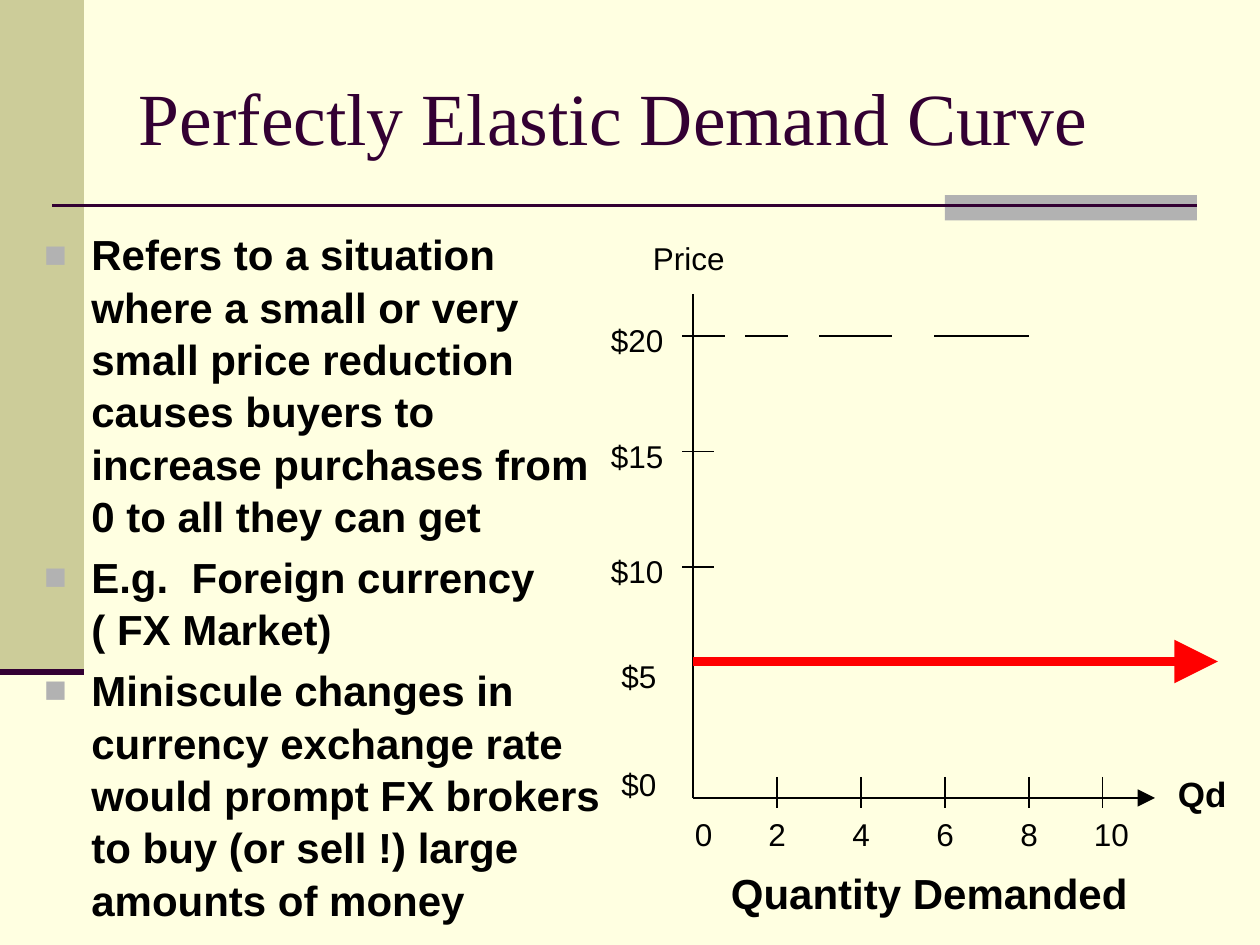
from dataclasses import dataclass

from lxml import etree
from pptx import Presentation
from pptx import util as u
from pptx.dml.color import RGBColor
from pptx.enum import shapes, text
from pptx.oxml import ns

Pt = u.Pt


@dataclass(frozen=True)
class Theme:
    background: str = "FFFFE1"
    panel: str = "CCCC99"
    accent: str = "B2B2B2"
    plum: str = "330033"
    ink: str = "000000"
    curve: str = "FF0000"
    title_font: str = "Times New Roman"
    body_font: str = "Arial"
    title_size: float = 42
    body_size: float = 24
    unit_size: float = 20
    label_size: float = 18


THEME = Theme()


def color(value):
    return RGBColor.from_string(value)


def add_child(parent, tag, **attributes):
    return etree.SubElement(parent, ns.qn(tag), attributes)


def place(shape, box):
    shape.left, shape.top, shape.width, shape.height = map(Pt, box)


def add_run(paragraph, content, size, bold=False, font=THEME.body_font, ink=THEME.ink):
    run = paragraph.add_run()
    run.text = content
    run.font.name, run.font.size, run.font.bold = font, Pt(size), bold
    run.font.color.rgb = color(ink)


def add_label(slide, box, content, size=THEME.label_size, bold=False, centered=False):
    frame = slide.shapes.add_textbox(*map(Pt, box)).text_frame
    frame.word_wrap = True
    paragraph = frame.paragraphs[0]
    if centered:
        paragraph.alignment = text.PP_ALIGN.CENTER
    add_run(paragraph, content, size, bold)


def add_bar(slide, box, fill):
    shape = slide.shapes.add_shape(shapes.MSO_SHAPE.RECTANGLE, *map(Pt, box))
    shape.shadow.inherit = False
    shape.fill.solid()
    shape.fill.fore_color.rgb = color(fill)
    shape.line.fill.background()


def add_line(slide, start, end, ink=THEME.ink, width=0.75, arrow=False):
    line = slide.shapes.add_connector(
        shapes.MSO_CONNECTOR.STRAIGHT, *map(Pt, (*start, *end)))
    line.line.color.rgb = color(ink)
    line.line.width = Pt(width)
    if arrow:
        add_child(line.line._get_or_add_ln(), "a:tailEnd",
                  type="triangle", w="lg", len="lg")
    add_child(line._element.spPr, "a:effectLst")


def add_decoration(slide, box):
    left, top, width, height = box
    # Side panel with its closing rule
    panel_width, panel_height = 48, 384
    add_bar(slide, (left, top, panel_width, panel_height), THEME.panel)
    # Rule under the title with a grey block at its right end
    right = left + width - 36
    add_bar(slide, (right - 144, top + 111.5, 144, 14.5), THEME.accent)
    add_line(slide, (left + 30, top + 117.5), (right, top + 117.5), THEME.plum, 1.5)
    add_line(slide, (left, top + panel_height), (left + panel_width, top + panel_height),
             THEME.plum, 3.5)


def prepare_placeholder(slide, shape, box, anchor):
    slide.shapes._spTree.append(shape._element)  # bring above the decoration
    place(shape, box)
    frame = shape.text_frame
    frame.word_wrap = True
    frame.auto_size = text.MSO_AUTO_SIZE.NONE
    frame.vertical_anchor = anchor
    return frame


def add_title(slide, box, content):
    frame = prepare_placeholder(slide, slide.shapes.title, box, text.MSO_ANCHOR.MIDDLE)
    paragraph = frame.paragraphs[0]
    paragraph.alignment = text.PP_ALIGN.LEFT
    add_run(paragraph, content, THEME.title_size, font=THEME.title_font, ink=THEME.plum)


def add_bullets(slide, box, items):
    frame = prepare_placeholder(slide, slide.placeholders[1], box, text.MSO_ANCHOR.TOP)
    for index, lines in enumerate(items):
        paragraph = frame.add_paragraph() if index else frame.paragraphs[0]
        paragraph.space_before = Pt(4.8 if index else 0)
        paragraph.line_spacing = 1.04
        properties = paragraph._p.get_or_add_pPr()
        properties.set("marL", str(Pt(27)))
        properties.set("indent", str(Pt(-27)))
        add_child(add_child(properties, "a:buClr"), "a:srgbClr", val=THEME.accent)
        add_child(properties, "a:buSzPct", val="90000")
        add_child(properties, "a:buFont", typeface=THEME.body_font)
        add_child(properties, "a:buChar", char="■")
        for number, line in enumerate(lines):
            if number:
                paragraph.add_line_break()
            add_run(paragraph, line, THEME.body_size, bold=True)


def add_demand_graph(slide, box):
    left, top, width, height = box
    origin_x, origin_y = left + 54, top + 324
    tick_left = origin_x - 6

    # Axes and the horizontal demand curve
    add_line(slide, (origin_x, top + 36), (origin_x, origin_y))
    add_line(slide, (origin_x, origin_y), (origin_x + 264, origin_y), arrow=True)
    curve_y = origin_y - 78
    add_line(slide, (origin_x, curve_y), (origin_x + 300, curve_y),
             THEME.curve, 5, arrow=True)

    # Price scale
    for index, price in enumerate(("$20", "$15", "$10")):
        tick_y = top + 60 + 66 * index
        add_label(slide, (left, tick_y - 12, 54, 29), price)
        add_line(slide, (tick_left, tick_y), (origin_x + 12, tick_y))
    for price, offset in (("$5", 240), ("$0", 301.5)):
        add_label(slide, (left + 6, top + offset, 42, 29), price)

    # Dashes running right from the top price
    for start, end in ((12, 18), (30, 54), (72, 114), (138, 192)):
        add_line(slide, (origin_x + start, top + 60), (origin_x + end, top + 60))

    # Quantity scale
    label_top = origin_y + 6
    add_label(slide, (tick_left, label_top, 27, 29), "0")
    for quantity, offset in ((2, 48), (4, 96), (6, 144), (8, 192), (10, 234)):
        tick_x = origin_x + offset
        add_line(slide, (tick_x, origin_y - 12), (tick_x, label_top))
        add_label(slide, (tick_x - 12, label_top, 42, 29), str(quantity))

    # Axis names
    add_label(slide, (left + 24, top + 1, 72, 29), "Price")
    add_label(slide, (left + width - 48, origin_y - 18, 48, 31), "Qd",
              THEME.unit_size, bold=True)
    add_label(slide, (left + 60, top + height - 36, 258, 36), "Quantity Demanded",
              THEME.body_size, bold=True, centered=True)


def main():
    presentation = Presentation()
    presentation.slide_width, presentation.slide_height = Pt(720), Pt(540)
    slide = presentation.slides.add_slide(presentation.slide_layouts[1])
    slide.background.fill.solid()
    slide.background.fill.fore_color.rgb = color(THEME.background)

    add_decoration(slide, (0, 0, 720, 540))
    add_title(slide, (72, 21.6, 612, 90), "Perfectly Elastic Demand Curve")
    add_bullets(slide, (18, 126, 336, 390), (
        ("Refers to a situation where a small or very small price reduction causes "
         "buyers to increase purchases from 0 to all they can get",),
        ("E.g.  Foreign currency ", "( FX Market)"),
        ("Miniscule changes in currency exchange rate would prompt FX brokers to buy "
         "(or sell !) large amounts of money",),
    ))
    add_demand_graph(slide, (342, 132, 372, 396))
    presentation.save("out.pptx")


if __name__ == "__main__":
    main()
